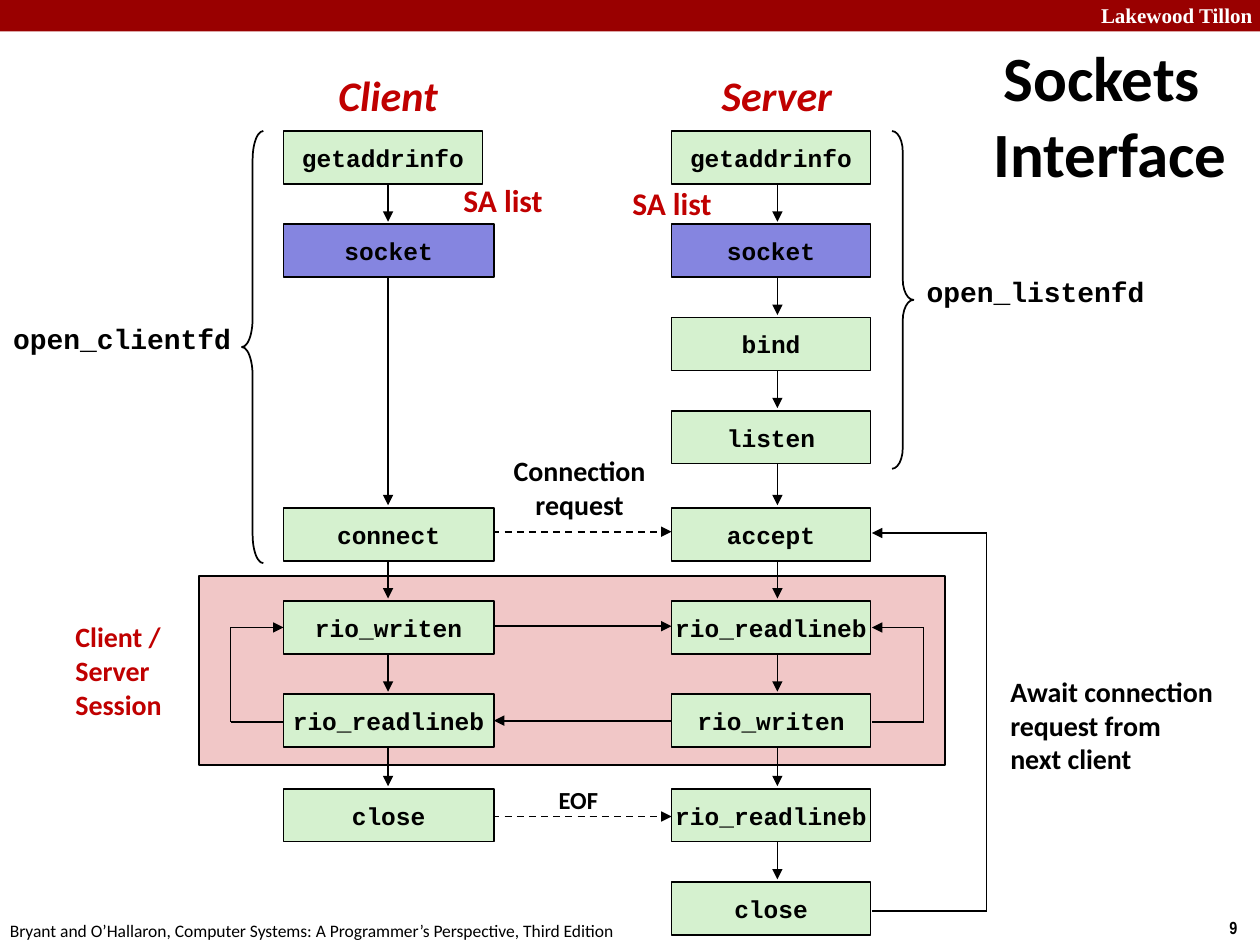
from dataclasses import dataclass
from itertools import pairwise
from typing import Any

from lxml import etree
from pptx import Presentation
from pptx import util as u
from pptx.dml.color import RGBColor
from pptx.enum import dml, shapes, text
from pptx.oxml.ns import qn

LEFT, CENTER = text.PP_ALIGN.LEFT, text.PP_ALIGN.CENTER
TOP, MIDDLE = text.MSO_ANCHOR.TOP, text.MSO_ANCHOR.MIDDLE
SHAPE = shapes.MSO_SHAPE


def color(code):
    return RGBColor.from_string(code)


def inches(*values):
    return [u.Inches(value) for value in values]


@dataclass
class Diagram:
    slide: Any
    font: str = "Calibri"
    code_font: str = "Courier New"
    ink: str = "000000"
    accent: str = "C00000"
    step: str = "D5F1CF"
    highlight: str = "8585E0"
    line_width: float = 1

    def fill_text(self, frame, lines, size, font=None, ink=None, bold=True, italic=False,
                  align=LEFT, anchor=MIDDLE, wrap=False):
        frame.word_wrap = wrap
        frame.vertical_anchor = anchor
        for number, line in enumerate(lines):
            para = frame.add_paragraph() if number else frame.paragraphs[0]
            para.alignment = align
            span = para.add_run()
            span.text = line
            span.font.name = font or self.font
            span.font.size = u.Pt(size)
            span.font.bold = bold
            span.font.italic = italic
            span.font.color.rgb = color(ink or self.ink)

    def label(self, place, *lines, **style):
        box = self.slide.shapes.add_textbox(*inches(*place))
        self.fill_text(box.text_frame, lines, **style)
        return box

    def shape(self, kind, place, fill=None, outlined=True):
        box = self.slide.shapes.add_shape(kind, *inches(*place))
        box.shadow.inherit = False
        if fill:
            box.fill.solid()
            box.fill.fore_color.rgb = color(fill)
        else:
            box.fill.background()
        if outlined:
            box.line.color.rgb = color(self.ink)
            box.line.width = u.Pt(self.line_width)
        else:
            box.line.fill.background()
        return box

    def call(self, place, name):
        fill = self.highlight if name == "socket" else self.step
        box = self.shape(SHAPE.RECTANGLE, place, fill)
        self.fill_text(box.text_frame, [name], 14, self.code_font, align=CENTER)

    def brace(self, kind, place, curve):
        box = self.shape(kind, place)
        box.adjustments[0] = curve

    def line(self, start, end, arrow=True, dashed=False):
        link = self.slide.shapes.add_connector(
            shapes.MSO_CONNECTOR.STRAIGHT, *inches(*start, *end))
        link.line.color.rgb = color(self.ink)
        link.line.width = u.Pt(self.line_width)
        if dashed:
            link.line.dash_style = dml.MSO_LINE.DASH
        properties = link._element.spPr
        if arrow:
            etree.SubElement(properties.find(qn("a:ln")), qn("a:tailEnd"), type="triangle")
        etree.SubElement(properties, qn("a:effectLst"))

    def loop(self, side, turn, start, end):
        points = [(side, start), (turn, start), (turn, end), (side, end)]
        for number, (here, there) in enumerate(pairwise(points)):
            self.line(here, there, arrow=number == 2)


def main():
    deck = Presentation()
    deck.slide_width, deck.slide_height = inches(10, 7.5)
    page = Diagram(deck.slides.add_slide(deck.slide_layouts[6]))

    page.shape(SHAPE.RECTANGLE, (0, 0, 10, 0.25), "990000", outlined=False)
    page.label((8.64, -0.03, 1.43, 0.3), "Lakewood Tillon", size=12,
               font="Times New Roman", ink="FFFFFF", anchor=TOP)
    page.label((9.66, 7.23, 0.34, 0.27), "9", size=10, font="Arial Narrow", anchor=TOP)
    page.label((-0.02, 7.25, 5.08, 0.27),
               "Bryant and O’Hallaron, Computer Systems: "
               "A Programmer’s Perspective, Third Edition",
               size=10, bold=False, anchor=TOP)
    title = page.label((7.58, 0.25, 2.33, 1.31), "Sockets Interface",
                       size=36, align=CENTER, wrap=True)
    indent = title.text_frame.paragraphs[0]._p.get_or_add_pPr()
    indent.set("marL", str(u.Inches(0.13)))
    indent.set("indent", str(u.Inches(-0.13)))

    page.shape(SHAPE.RECTANGLE, (1.58, 4.57, 5.92, 1.5), "F1C7C7")
    page.loop(6.92, 7.33, 5.73, 4.98)
    page.loop(2.25, 1.83, 5.73, 4.98)
    page.loop(6.92, 7.83, 7.23, 4.23)

    rows = [1.04, 1.78, 2.52, 3.26, 4.03, 4.77, 5.51, 6.26, 7]
    client = {0: "getaddrinfo", 1: "socket", 4: "connect", 5: "rio_writen",
              6: "rio_readlineb", 7: "close"}
    server = dict(enumerate(["getaddrinfo", "socket", "bind", "listen", "accept",
                             "rio_readlineb", "rio_writen", "rio_readlineb", "close"]))
    columns = [(client, 2.25, 1.67, 3.08), (server, 5.33, 1.58, 6.17)]

    for calls, left, width, middle in columns:
        for upper, lower in pairwise(calls):
            page.line((middle, rows[upper] + 0.39), (middle, rows[lower] - 0.02))
    page.line((3.33, 4.22), (5.33, 4.22), dashed=True)
    page.line((3.92, 4.97), (5.33, 4.97))
    page.line((5.33, 5.72), (3.92, 5.72))
    page.line((3.33, 6.48), (5.33, 6.48), dashed=True)
    for calls, left, width, middle in columns:
        for row, name in calls.items():
            page.call((left, rows[row], width if row else 1.58, 0.42), name)

    page.brace(SHAPE.RIGHT_BRACE, (7.08, 1.04, 0.17, 2.68), 0.96)
    page.brace(SHAPE.LEFT_BRACE, (1.92, 1.04, 0.17, 3.43), 1.33)
    for name, left, top in [("open_listenfd", 7.25, 2.13), ("open_clientfd", 0, 2.5)]:
        page.label((left, top, 1.94, 0.37), name, size=16, font=page.code_font, align=CENTER)

    for name, left, width in [("Client", 2.58, 1), ("Server", 5.62, 1.09)]:
        page.label((left, 0.5, width, 0.5), name, size=24, ink=page.accent,
                   italic=True, align=CENTER)
    for left, top in [(4.92, 1.41), (3.58, 1.39)]:
        page.label((left, top, 0.84, 0.4), "SA list", size=18, ink=page.accent, anchor=TOP)
    page.label((0.5, 4.87, 0.92, 0.9), "Client / Server", "Session",
               size=16, ink=page.accent, wrap=True)
    page.label((3.97, 3.55, 1.26, 0.64), "Connection", "request", size=16, align=CENTER)
    page.label((4.33, 6.18, 0.52, 0.34), "EOF", size=14, align=CENTER)
    page.label((7.92, 5.3, 1.83, 0.91), "Await connection", "request from",
               "next client", size=16)

    deck.save("out.pptx")


if __name__ == "__main__":
    main()
